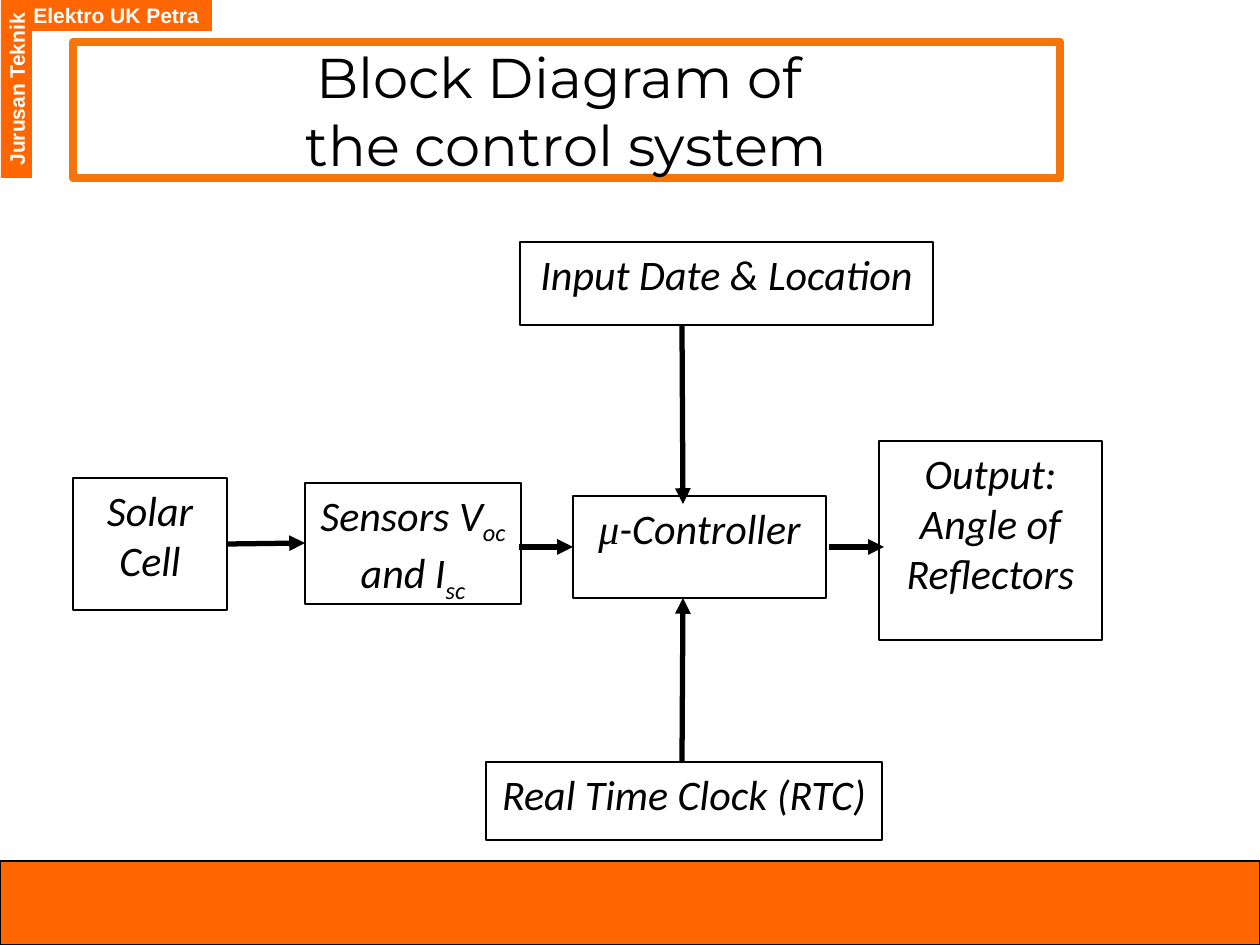
from lxml import etree
from pptx import Presentation, util as u
from pptx.dml.color import RGBColor
from pptx.enum import shapes, text
from pptx.oxml import ns

HUE = {"band": "FF6600", "frame": "F6750A", "ink": "000000", "paper": "FFFFFF"}
TITLE = "Block Diagram of \vthe control system"
HEAD = (73, 42, 987, 136)
BAND = (0, 861, 1260, 84)
TABS = [
    ("Elektro UK Petra", (21, 0, 191, 31), 0),
    ("Jurusan Teknik", (-73, 73, 179, 31), 270),
]
BLOCKS = [
    ([("Real Time Clock (RTC)", "")], (486, 762, 396, 78)),
    ([("μ", "greek"), ("-Controller", "")], (573, 496, 253, 102)),
    ([("Output: Angle of Reflectors", "")], (879, 441, 223, 199)),
    ([("Input Date & Location", "")], (520, 242, 413, 83)),
    ([("Sensors V", ""), ("oc", "sub"), (" and I", ""), ("sc", "sub")],
     (305, 483, 216, 121)),
    ([("Solar Cell", "")], (73, 478, 154, 132)),
]
ARROWS = [
    (228, 544, 305, 543),
    (519, 547, 573, 547),
    (829, 547, 884, 547),
    (682, 325, 683, 504),
    (682, 762, 683, 598),
]
SCALE = u.Inches(1) / 126


def px(nums):
    return [round(n * SCALE) for n in nums]


def rgb(name):
    return RGBColor.from_string(HUE[name])


def style(font, size, name, hue, bold=False, slant=False):
    font.size, font.name = u.Pt(size), name
    font.bold, font.italic = bold, slant
    font.color.rgb = rgb(hue)


def rule(line, hue, width):
    line.color.rgb = rgb(hue)
    line.width = u.Pt(width)


def box(slide, area, fill, edge=True):
    shape = slide.shapes.add_shape(shapes.MSO_SHAPE.RECTANGLE, *px(area))
    shape.shadow.inherit = False
    shape.fill.solid()
    shape.fill.fore_color.rgb = rgb(fill)
    if edge:
        rule(shape.line, "ink", 0.75)
    else:
        shape.line.fill.background()
    return shape


def tab(slide, words, area, turn):
    shape = box(slide, area, "band", False)
    shape.rotation = turn
    frame = shape.text_frame
    frame.word_wrap = False
    frame.vertical_anchor = text.MSO_ANCHOR.MIDDLE
    para = frame.paragraphs[0]
    para.alignment = text.PP_ALIGN.LEFT
    para.add_run().text = words
    style(para.font, 12, "Arial", "paper", bold=True)


def block(slide, parts, area):
    frame = box(slide, area, "paper").text_frame
    frame.word_wrap = True
    frame.vertical_anchor = text.MSO_ANCHOR.TOP
    para = frame.paragraphs[0]
    para.alignment = text.PP_ALIGN.CENTER
    para.space_after = u.Pt(10)
    style(para.font, 24, "Calibri", "ink", slant=True)
    for words, kind in parts:
        run = para.add_run()
        run.text = words
        if kind == "greek":
            run.font.name = "Times New Roman"
        elif kind == "sub":
            run._r.get_or_add_rPr().set("baseline", "-25000")


def arrow(slide, ends):
    link = slide.shapes.add_connector(shapes.MSO_CONNECTOR.STRAIGHT, *px(ends))
    rule(link.line, "ink", 3)
    tip = etree.SubElement(link.line._get_or_add_ln(), ns.qn("a:tailEnd"))
    tip.set("type", "triangle")
    etree.SubElement(link._element.spPr, ns.qn("a:effectLst"))


def head(slide):
    shape = slide.shapes.title
    shape.left, shape.top, shape.width, shape.height = px(HEAD)
    rule(shape.line, "frame", 5)
    frame = shape.text_frame
    frame.text = TITLE
    frame.word_wrap = False
    frame.auto_size = text.MSO_AUTO_SIZE.NONE
    frame.vertical_anchor = text.MSO_ANCHOR.MIDDLE
    para = frame.paragraphs[0]
    para.alignment = text.PP_ALIGN.CENTER
    style(para.font, 32, "Montserrat", "ink")


def main():
    deck = Presentation()
    deck.slide_width, deck.slide_height = px((1260, 945))
    slide = deck.slides.add_slide(deck.slide_layouts[5])
    box(slide, BAND, "band")
    for item in TABS:
        tab(slide, *item)
    for item in BLOCKS:
        block(slide, *item)
    for ends in ARROWS:
        arrow(slide, ends)
    head(slide)
    deck.save("out.pptx")


if __name__ == "__main__":
    main()
